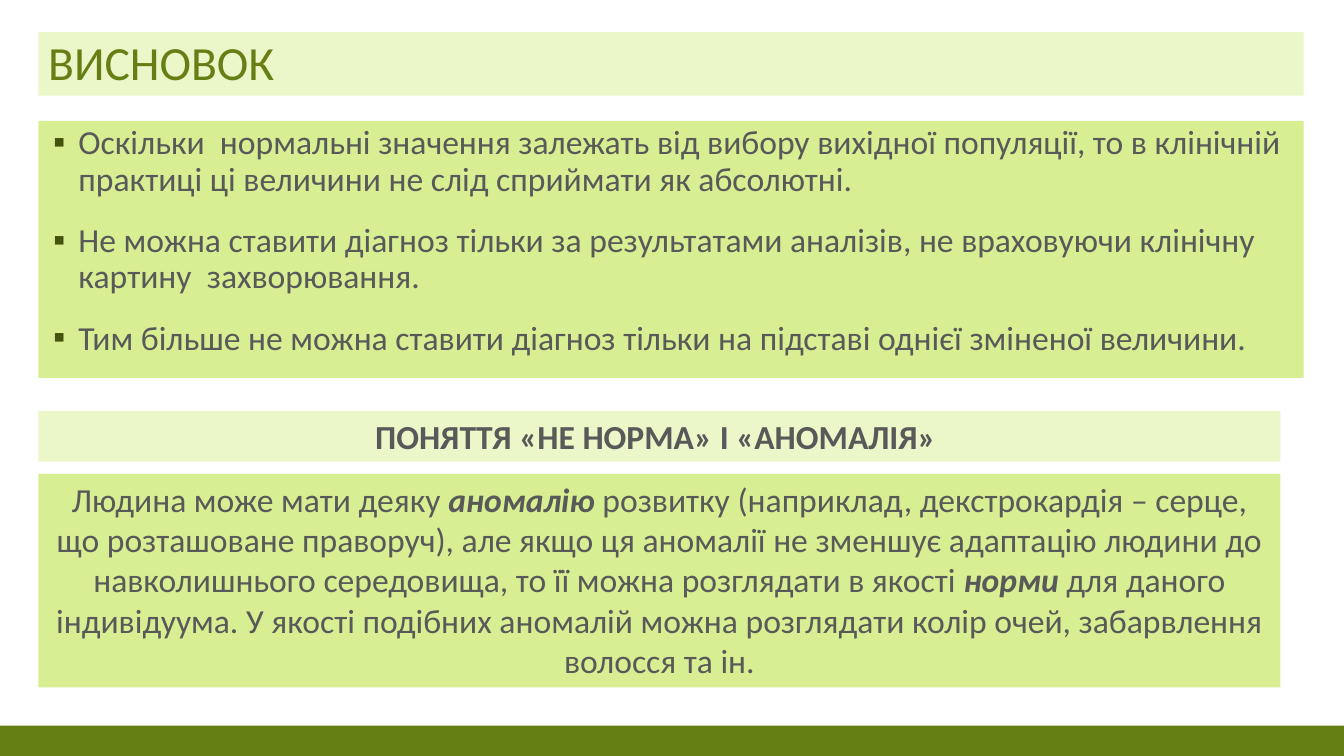
from lxml.etree import SubElement
from pptx import Presentation
from pptx.dml.color import RGBColor
from pptx.enum.shapes import MSO_SHAPE
from pptx.enum.text import MSO_ANCHOR, PP_ALIGN
from pptx.oxml.ns import qn
from pptx.util import Inches, Pt

FONT = "Calibri"
OLIVE, DARK_OLIVE, TEXT = "657F14", "43540D", "595959"
PALE, LIME = "EBF6C9", "D8EE93"
LEFT, TOP_WIDTH, LOWER_WIDTH = 0.38, 12.55, 12.32

CONCLUSIONS = [
    "Оскільки  нормальні значення залежать від вибору вихідної популяції, "
    "то в клінічній практиці ці величини не слід сприймати як абсолютні.",
    "Не можна ставити діагноз тільки за результатами аналізів, "
    "не враховуючи клінічну картину  захворювання.",
    "Тим більше не можна ставити діагноз тільки на підставі однієї зміненої величини.",
]
EMPHASIS = {"bold": True, "italic": True}
ANOMALY = [
    ("Людина може мати деяку ", {}),
    ("аномалію ", EMPHASIS),
    ("розвитку (наприклад, декстрокардія – серце, що розташоване праворуч), "
     "але якщо ця аномалії не зменшує адаптацію людини до навколишнього "
     "середовища, то її можна розглядати в якості ", {}),
    ("норми ", EMPHASIS),
    ("для даного індивідуума. У якості подібних аномалій можна розглядати "
     "колір очей, забарвлення волосся та ін.", {}),
]


def rgb(value):
    """Return the colour for a hex string."""
    return RGBColor.from_string(value)


def apply(target, values):
    """Set each attribute in values on target."""
    for name, value in values.items():
        setattr(target, name, value)


def add_panel(s, left, top, width, height, fill, anchor=MSO_ANCHOR.TOP):
    """Add a plain filled rectangle and return its text frame."""
    sp = s.shapes.add_shape(MSO_SHAPE.RECTANGLE, Inches(left), Inches(top),
                            Inches(width), Inches(height))
    sp.shadow.inherit = False
    sp.fill.solid()
    sp.fill.fore_color.rgb = rgb(fill)
    sp.line.fill.background()
    tf = sp.text_frame
    apply(tf, {"word_wrap": True, "vertical_anchor": anchor})
    return tf


def write(p, runs, size=24, color=TEXT, **layout):
    """Fill a paragraph with (text, font values) runs."""
    apply(p, {"alignment": PP_ALIGN.LEFT, **layout})
    for text, values in runs:
        r = p.add_run()
        r.text = text
        apply(r.font, {"name": FONT, "size": Pt(size), **values})
        r.font.color.rgb = rgb(color)


def add_bullet(p, char, color):
    """Give a paragraph a coloured hanging bullet."""
    pPr = p._p.get_or_add_pPr()
    pPr.set("marL", str(Inches(0.3)))
    pPr.set("indent", str(Inches(-0.25)))
    SubElement(SubElement(pPr, qn("a:buClr")), qn("a:srgbClr")).set("val", color)
    SubElement(pPr, qn("a:buFont")).set("typeface", FONT)
    SubElement(pPr, qn("a:buChar")).set("char", char)


def add_bullets(tf, items):
    """Write one bulleted paragraph per item."""
    for i, item in enumerate(items):
        p = tf.add_paragraph() if i else tf.paragraphs[0]
        write(p, [(item, {})], line_spacing=0.9, space_before=Pt(18))
        add_bullet(p, "▪", DARK_OLIVE)


def main():
    """Build the conclusion slide."""
    prs = Presentation()
    apply(prs, {"slide_width": Inches(13.33), "slide_height": Inches(7.5)})
    s = prs.slides.add_slide(prs.slide_layouts[6])

    add_panel(s, 0, 7.2, 13.33, 0.3, OLIVE)
    title = add_panel(s, LEFT, 0.32, TOP_WIDTH, 0.63, PALE, MSO_ANCHOR.BOTTOM)
    write(title.paragraphs[0], [("ВИСНОВОК", {})], 34, OLIVE, line_spacing=0.9)
    add_bullets(add_panel(s, LEFT, 1.2, TOP_WIDTH, 2.55, LIME), CONCLUSIONS)

    heading = add_panel(s, LEFT, 4.08, LOWER_WIDTH, 0.5, PALE)
    write(heading.paragraphs[0], [("ПОНЯТТЯ «НЕ НОРМА» І «АНОМАЛІЯ» ", {"bold": True})],
          alignment=PP_ALIGN.CENTER)
    anomaly = add_panel(s, LEFT, 4.7, LOWER_WIDTH, 2.12, LIME)
    write(anomaly.paragraphs[0], ANOMALY, alignment=PP_ALIGN.CENTER)

    prs.save("out.pptx")


if __name__ == "__main__":
    main()
